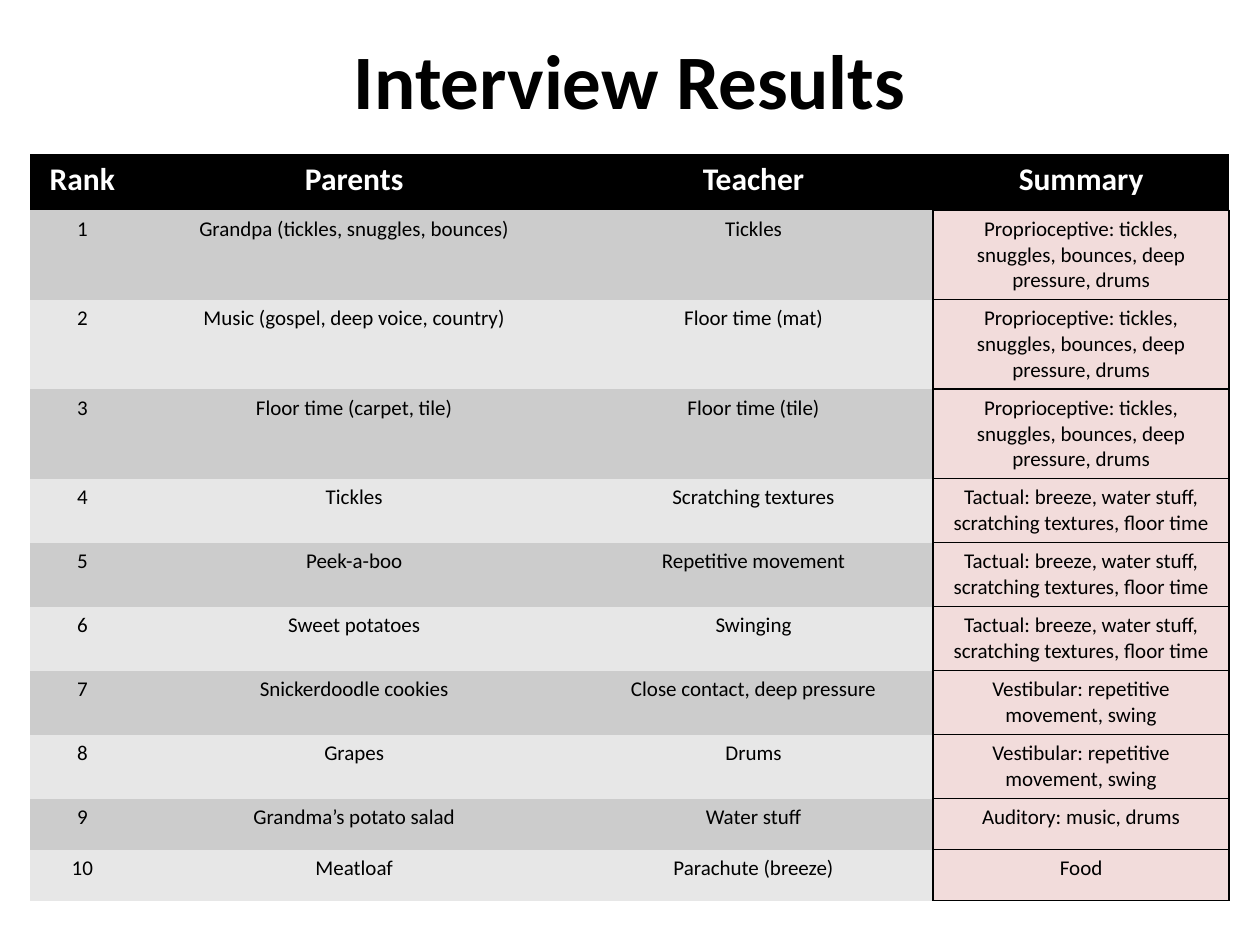
from lxml import etree
from pptx import Presentation
from pptx import util as u
from pptx.dml import color
from pptx.enum import text
from pptx.oxml import ns


def paint(value):
    return color.RGBColor.from_string(value)


def write(box, words, size=12, bold=False, ink="000000"):
    para = box.text_frame.paragraphs[0]
    para.alignment = text.PP_ALIGN.CENTER
    span = para.add_run()
    span.text = words
    span.font.name = "Calibri"
    span.font.size = u.Pt(size)
    span.font.bold = bold
    span.font.color.rgb = paint(ink)


deck = Presentation()
deck.slide_width, deck.slide_height = u.Cm(25.4), u.Cm(19.05)
page = deck.slides.add_slide(deck.slide_layouts[5])

# Title
title = page.shapes.title
title.left, title.top = u.Cm(1.27), u.Cm(0.38)
title.width, title.height = u.Cm(22.86), u.Cm(2.41)
title.text_frame.vertical_anchor = text.MSO_ANCHOR.MIDDLE
write(title, "Interview Results", size=44, bold=True)

# Table content: parents, teacher, summary by rank
proprioceptive = "Proprioceptive: tickles, snuggles, bounces, deep pressure, drums"
tactual = "Tactual: breeze, water stuff, scratching textures, floor time"
vestibular = "Vestibular: repetitive movement, swing"
answers = [
    ("Grandpa (tickles, snuggles, bounces)", "Tickles", proprioceptive),
    ("Music (gospel, deep voice, country)", "Floor time (mat)", proprioceptive),
    ("Floor time (carpet, tile)", "Floor time (tile)", proprioceptive),
    ("Tickles", "Scratching textures", tactual),
    ("Peek-a-boo", "Repetitive movement", tactual),
    ("Sweet potatoes", "Swinging", tactual),
    ("Snickerdoodle cookies", "Close contact, deep pressure", vestibular),
    ("Grapes", "Drums", vestibular),
    ("Grandma’s potato salad", "Water stuff", "Auditory: music, drums"),
    ("Meatloaf", "Parachute (breeze)", "Food"),
]
rows = [("Rank", "Parents", "Teacher", "Summary")]
rows += [(str(rank), *answer) for rank, answer in enumerate(answers, 1)]
widths = [2.1, 8.86, 7.24, 5.97]
heights = [1.14] + [1.8] * 3 + [1.29] * 5 + [1.03] * 2

# Table grid
table = page.shapes.add_table(
    len(rows), len(widths), u.Cm(0.61), u.Cm(3.1),
    u.Cm(sum(widths)), u.Cm(sum(heights))).table
for column, width in zip(table.columns, widths):
    column.width = u.Cm(width)
for row, height in zip(table.rows, heights):
    row.height = u.Cm(height)

# Cells: black header, banded answers, outlined summary
for r, row in enumerate(rows):
    for c, words in enumerate(row):
        cell = table.cell(r, c)
        if r == 0:
            write(cell, words, size=18, bold=True, ink="FFFFFF")
            fill, sides = "000000", "B" if c == 3 else ""
        else:
            write(cell, words)
            fill = "F2DCDB" if c == 3 else "CCCCCC" if r % 2 else "E7E7E7"
            sides = {2: "R", 3: "LRTB"}.get(c, "")
        # Borders come before the fill in the cell properties
        properties = cell._tc.get_or_add_tcPr()
        for side in sides:
            line = etree.SubElement(properties, ns.qn("a:ln" + side), w=str(u.Pt(1)))
            solid = etree.SubElement(line, ns.qn("a:solidFill"))
            etree.SubElement(solid, ns.qn("a:srgbClr"), val="000000")
        cell.fill.solid()
        cell.fill.fore_color.rgb = paint(fill)

# Only the explicit borders and fills show
table.first_row = False
table.horz_banding = False
style = table._tbl.tblPr.find(ns.qn("a:tableStyleId"))
style.text = "{2D5ABB26-0587-4C30-8999-92F81FD0307C}"

deck.save("out.pptx")
